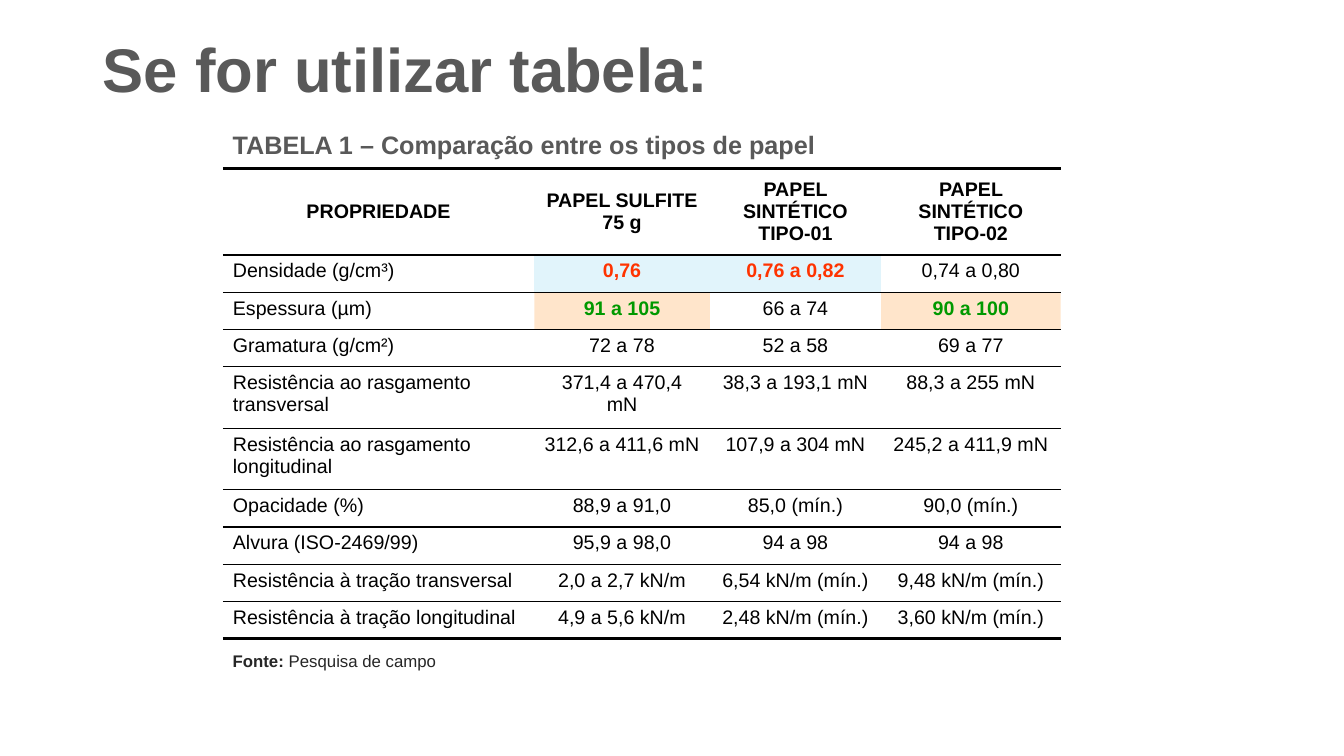
from dataclasses import dataclass

from lxml.etree import SubElement
from pptx import Presentation
from pptx.dml.color import RGBColor as Rgb
from pptx.enum.text import MSO_ANCHOR as Anchor, MSO_AUTO_SIZE as Fit, PP_ALIGN as Align
from pptx.oxml import parse_xml
from pptx.oxml.ns import nsdecls, qn
from pptx.util import Inches, Pt


@dataclass(frozen=True)
class Theme:
    font: str = "Arial"
    gray: str = "595959"
    dark: str = "262626"
    ink: str = "000000"
    red: str = "FF3300"
    green: str = "009900"
    blue: str = "E1F4FB"
    peach: str = "FFCC99"
    title: int = 44
    caption: int = 18
    cell: int = 14
    source: int = 12
    thin: float = 1
    thick: float = 2.25


THEME = Theme()

COLS = (3.09, 1.74, 1.7, 1.78)
HEAD, LINE, DOUBLE = 0.86, 0.37, 0.61
ROWS = (
    ("PROPRIEDADE", "PAPEL SULFITE 75 g", "PAPEL SINTÉTICO\nTIPO-01", "PAPEL SINTÉTICO\nTIPO-02"),
    ("Densidade (g/cm³)", "0,76", "0,76 a 0,82", "0,74 a 0,80"),
    ("Espessura (µm)", "91 a 105", "66 a 74", "90 a 100"),
    ("Gramatura (g/cm²)", "72 a 78", "52 a 58", "69 a 77"),
    ("Resistência ao rasgamento transversal", "371,4 a 470,4 mN", "38,3 a 193,1 mN", "88,3 a 255 mN"),
    ("Resistência ao rasgamento longitudinal", "312,6 a 411,6 mN", "107,9 a 304 mN", "245,2 a 411,9 mN"),
    ("Opacidade (%)", "88,9 a 91,0", "85,0 (mín.)", "90,0 (mín.)"),
    ("Alvura (ISO-2469/99)", "95,9 a 98,0", "94 a 98", "94 a 98"),
    ("Resistência à tração transversal", "2,0 a 2,7 kN/m", "6,54 kN/m (mín.)", "9,48 kN/m (mín.)"),
    ("Resistência à tração longitudinal", "4,9 a 5,6 kN/m", "2,48 kN/m (mín.)", "3,60 kN/m (mín.)"),
)
# (row, column): text colour, fill, opacity in percent
MARKS = {
    (1, 1): (THEME.red, THEME.blue, 100),
    (1, 2): (THEME.red, THEME.blue, 100),
    (2, 1): (THEME.green, THEME.peach, 50),
    (2, 3): (THEME.green, THEME.peach, 50),
}


def style(font, size, color, bold):
    look = {"name": THEME.font, "size": Pt(size), "bold": bold}
    for name, value in look.items():
        setattr(font, name, value)
    font.color.rgb = Rgb.from_string(color)


def add_text(slide, box, runs, size, color, **frame):
    """Add one line of text from (words, bold) pairs; frame holds text frame settings."""
    text = slide.shapes.add_textbox(*map(Inches, box)).text_frame
    for name, value in ({"word_wrap": True} | frame).items():
        setattr(text, name, value)
    for words, bold in runs:
        run = text.paragraphs[0].add_run()
        run.text = words
        style(run.font, size, color, bold)
    return text


def paint(cell, color, alpha):
    cell.fill.solid()
    cell.fill.fore_color.rgb = Rgb.from_string(color)
    if alpha < 100:
        tint = next(cell._tc.tcPr.iter(qn("a:srgbClr")))
        SubElement(tint, qn("a:alpha"), val=str(alpha * 1000))


def rule(cell, top, bottom):
    """Draw the top and bottom borders and hide the side ones."""
    edges = {"lnL": 0, "lnR": 0, "lnT": top, "lnB": bottom}
    for spot, (tag, width) in enumerate(edges.items()):
        fill = f'<a:solidFill><a:srgbClr val="{THEME.ink}"/></a:solidFill>' if width else "<a:noFill/>"
        edge = parse_xml(f'<a:{tag} {nsdecls("a")} w="{Pt(width)}">{fill}</a:{tag}>')
        cell._tc.tcPr.insert(spot, edge)


def fill_cell(cell, row, col, words):
    head, last = row == 0, row == len(ROWS) - 1
    mark = MARKS.get((row, col))
    cell.text = words
    cell.vertical_anchor = Anchor.MIDDLE if head else Anchor.TOP
    for para in cell.text_frame.paragraphs:
        para.alignment = Align.CENTER if head or col else Align.LEFT
        for run in para.runs:
            style(run.font, THEME.cell, mark[0] if mark else THEME.ink, bool(head or mark))
    if mark:
        paint(cell, *mark[1:])
    else:
        cell.fill.background()
    rule(cell, THEME.thick if head else THEME.thin, THEME.thick if last else THEME.thin)


def add_grid(slide, left, top):
    highs = [HEAD] + [DOUBLE if "rasgamento" in row[0] else LINE for row in ROWS[1:]]
    size = (left, top, sum(COLS), sum(highs))
    table = slide.shapes.add_table(len(ROWS), len(COLS), *map(Inches, size)).table
    table.first_row = table.horz_banding = False
    for col, width in zip(table.columns, COLS):
        col.width = Inches(width)
    for row, high in zip(table.rows, highs):
        row.height = Inches(high)
    for row, line in enumerate(ROWS):
        for col, words in enumerate(line):
            fill_cell(table.cell(row, col), row, col, words)


def main():
    deck = Presentation()
    deck.slide_width, deck.slide_height = Inches(13.33), Inches(7.5)
    slide = deck.slides.add_slide(deck.slide_layouts[6])
    add_text(slide, (2.21, 6.41, 8.2, 0.3), [("Fonte: ", True), ("Pesquisa de campo", False)],
             THEME.source, THEME.dark, auto_size=Fit.SHAPE_TO_FIT_TEXT)
    add_text(slide, (2.21, 1.23, 8.13, 0.4), [("TABELA 1 – Comparação entre os tipos de papel", True)],
             THEME.caption, THEME.gray, auto_size=Fit.SHAPE_TO_FIT_TEXT, vertical_anchor=Anchor.MIDDLE)
    add_grid(slide, 2.21, 1.67)
    title = add_text(slide, (0.92, 0.34, 11.5, 0.96), [("Se for utilizar tabela:", True)],
                     THEME.title, THEME.gray)
    title.paragraphs[0].line_spacing = 0.9
    deck.save("out.pptx")


if __name__ == "__main__":
    main()
